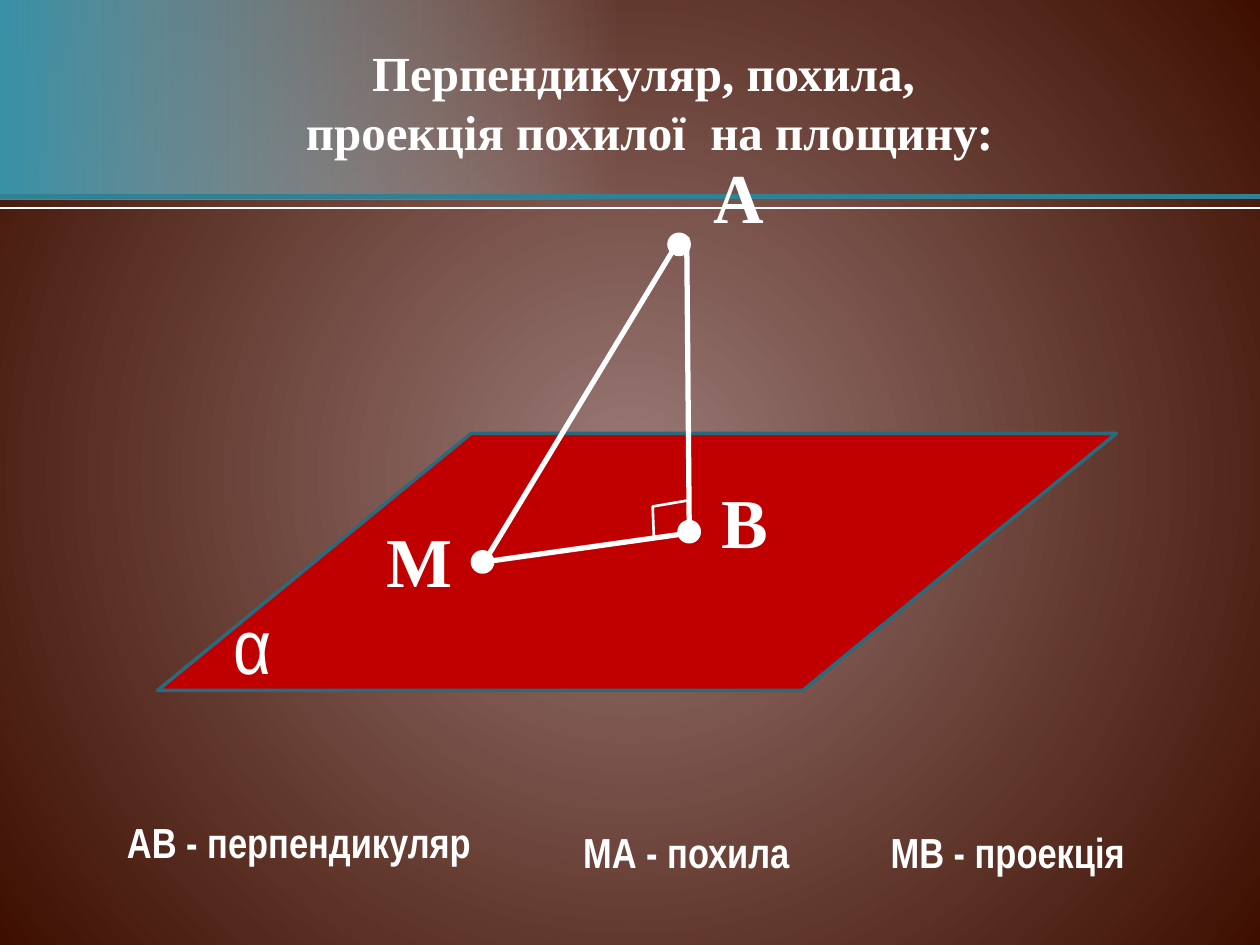
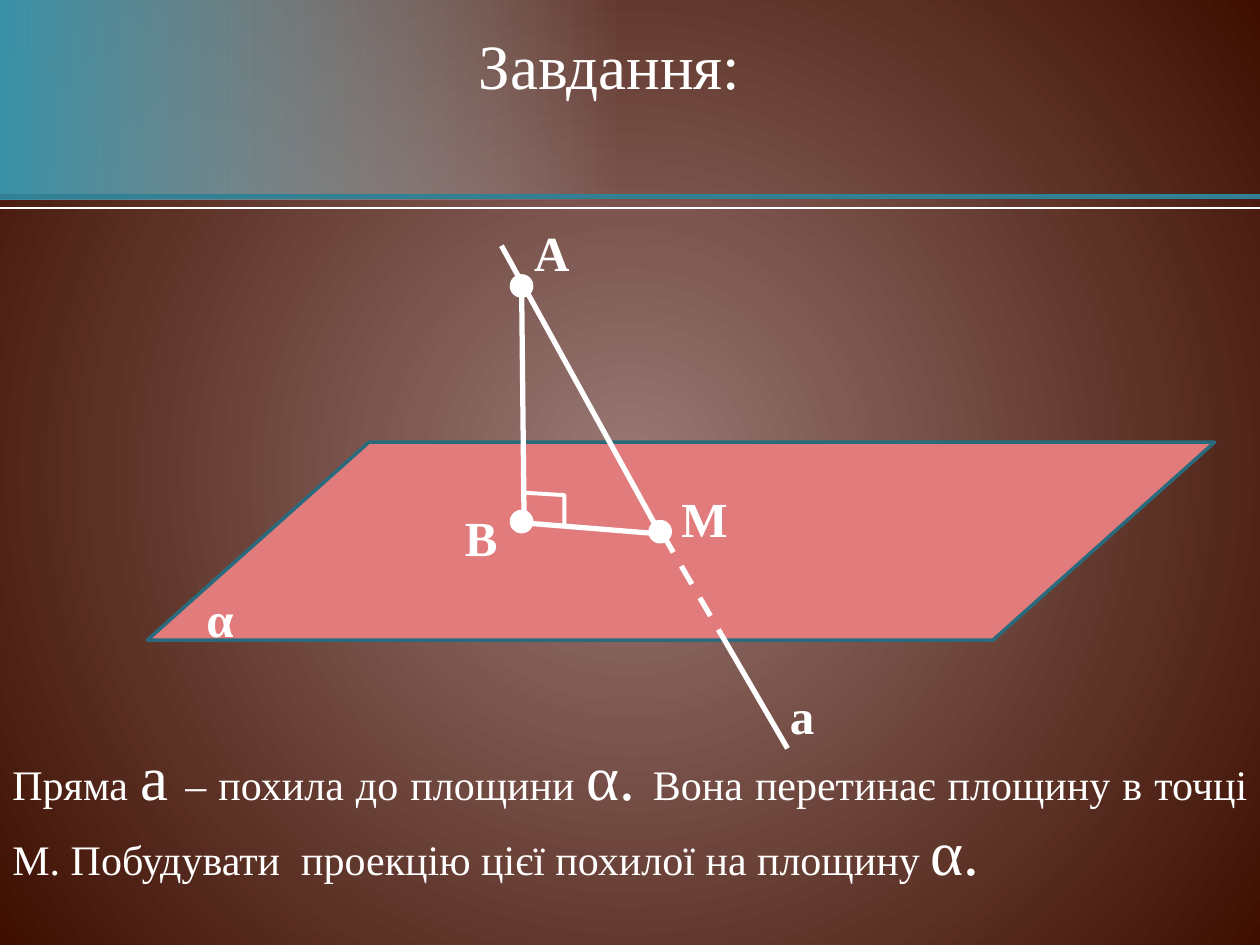
from lxml import etree
from pptx import Presentation
from pptx.dml.color import RGBColor
from pptx.enum.dml import MSO_LINE
from pptx.enum.shapes import MSO_CONNECTOR, MSO_SHAPE
from pptx.enum.text import MSO_ANCHOR, MSO_AUTO_SIZE, PP_ALIGN
from pptx.oxml.ns import qn
from pptx.util import Inches, Pt

WHITE = RGBColor(0xFF, 0xFF, 0xFF)
TEAL = RGBColor(0x38, 0x91, 0xA7)
MIST = RGBColor(0xE8, 0xEE, 0xF1)
RULE = RGBColor(0x31, 0x80, 0x93)
EDGE = RGBColor(0x29, 0x6B, 0x7C)
RED = RGBColor(0xC0, 0x00, 0x00)
PINK = RGBColor(0xE1, 0x7B, 0x7C)
GLOW = RGBColor(0x99, 0x78, 0x74)
DARK = RGBColor(0x3E, 0x0F, 0x01)

LEFT, MID, JUST = PP_ALIGN.LEFT, PP_ALIGN.CENTER, PP_ALIGN.JUSTIFY
TOP, FIXED = MSO_ANCHOR.TOP, MSO_AUTO_SIZE.NONE
RECT, SLANT = MSO_SHAPE.RECTANGLE, MSO_SHAPE.PARALLELOGRAM
DOT, STRAIGHT = MSO_SHAPE.FLOWCHART_CONNECTOR, MSO_CONNECTOR.STRAIGHT
DASH = MSO_LINE.DASH
SERIF, SANS = "Times New Roman", "Arial Narrow"

HEAD = {"name": SERIF, "size": Pt(28), "bold": True}
TASK = {"name": SERIF, "size": Pt(36), "bold": False}
BIG = {"name": SERIF, "size": Pt(40), "bold": True}
ALPHA = {"name": SANS, "size": Pt(44), "bold": False}
NOTE = {"name": SANS, "size": Pt(24), "bold": True}
TEXT = {"name": SERIF, "size": Pt(24), "bold": False}

PAGES = [
    {
        "title": ((0.31, 0.29, 9.69, 1.04), HEAD,
                  ["Перпендикуляр, похила, ", "проекція похилої  на площину:"]),
        "plane": ((1.25, 3.44, 7.61, 2.04), 1.22, RED),
        "lines": [
            (5.45, 1.88, 5.47, 4.14, None),
            (5.34, 1.99, 3.88, 4.4, None),
            (3.91, 4.45, 5.55, 4.22, None),
        ],
        "angle": ([(5.47, 3.97), (5.18, 4.02), (5.19, 4.28)], 1.5),
        "dots": [(5.39, 4.14), (5.31, 1.86), (3.75, 4.38)],
        "labels": [
            ((1.69, 4.69, 0.63, 0.84), MID, [("α", ALPHA)]),
            ((5.39, 1.17, 0.94, 0.77), MID, [("A", BIG)]),
            ((5.63, 3.75, 0.55, 0.77), LEFT, [("В", BIG)]),
            ((2.97, 4.06, 0.7, 0.77), LEFT, [("М", BIG)]),
            ((0.91, 6.43, 3.23, 0.5), LEFT, [("АВ - перпендикуляр", NOTE)]),
            ((4.53, 6.51, 2.2, 0.5), LEFT, [("МА - похила", NOTE)]),
            ((6.97, 6.51, 2.64, 0.5), LEFT, [("МВ - проекція", NOTE)]),
        ],
    },
    {
        "title": ((1.56, 0.16, 6.56, 0.71), TASK, ["Завдання:"]),
        "plane": ((1.17, 3.51, 8.47, 1.57), 1.12, PINK),
        "lines": [
            (3.98, 1.95, 5.23, 4.22, None),
            (5.26, 4.24, 5.75, 5.08, DASH),
            (5.75, 5.08, 6.25, 5.94, None),
            (4.14, 2.27, 4.16, 4.18, None),
            (4.16, 4.15, 5.27, 4.24, None),
        ],
        "angle": ([(4.15, 3.91), (4.48, 3.93), (4.48, 4.16)], 2.25),
        "dots": [(5.16, 4.14), (4.06, 2.19), (4.06, 4.06)],
        "labels": [
            ((5.31, 3.83, 0.63, 0.57), LEFT, [("М", HEAD)]),
            ((1.54, 4.62, 1.33, 0.57), LEFT, [("α", HEAD)]),
            ((4.14, 1.72, 0.78, 0.57), LEFT, [("А", HEAD)]),
            ((3.59, 3.98, 0.39, 0.57), LEFT, [("В", HEAD)]),
            ((6.17, 5.39, 0.86, 0.57), LEFT, [("а", HEAD)]),
            ((0, 5.8, 10, 1.31), JUST, [
                ("Пряма ", TEXT), ("a ", TASK), ("– похила до площини ", TEXT),
                ("α. ", TASK),
                ("Вона перетинає площину в точці М. Побудувати  проекцію "
                 "цієї похилої на площину ", TEXT),
                ("α.", TASK)]),
        ],
    },
]


def add_run(para, text, style):
    run = para.add_run()
    run.text = text
    for key, value in style.items():
        setattr(run.font, key, value)
    run.font.color.rgb = WHITE


def add_line(slide, ends, color, width, dash=None):
    line = slide.shapes.add_connector(STRAIGHT, *map(Inches, ends))
    line.line.color.rgb = color
    line.line.width = Pt(width)
    if dash:
        line.line.dash_style = dash
    etree.SubElement(line.element.spPr, qn("a:effectLst"))
    return line


prs = Presentation()
prs.slide_width, prs.slide_height = Inches(10), Inches(7.5)
layout = prs.slide_layouts[5]

back = prs.slide_master.background.fill
back.gradient()
for stop, color, pos in zip(back.gradient_stops, (GLOW, DARK), (0, 1)):
    stop.color.rgb = color
    stop.position = pos
lin = next(prs.slide_master.element.iter(qn("a:lin")))
ring = etree.Element(qn("a:path"), path="circle")
etree.SubElement(ring, qn("a:fillToRect"), dict.fromkeys("ltrb", "100000"))
lin.getparent().replace(lin, ring)

slides = [prs.slides.add_slide(layout) for page in PAGES]

band = slides[0].shapes.add_shape(RECT, 0, 0, Inches(10), Inches(1.58))
band.shadow.inherit = False
band.line.fill.background()
band.fill.gradient()
band.fill.gradient_angle = 0
for stop, color, pos in zip(band.fill.gradient_stops, (TEAL, MIST), (0, 0.49)):
    stop.color.rgb = color
    stop.position = pos
tint = list(band.element.spPr.iter(qn("a:srgbClr")))[-1]
etree.SubElement(tint, qn("a:alpha"), val="0")
rules = [add_line(slides[0], (0, y, 10, y), color, width)
         for y, color, width in ((1.56, RULE, 3), (1.65, WHITE, 1.25))]
for part in [band, *rules]:
    layout.shapes.element.append(part.element)

for slide, page in zip(slides, PAGES):
    shapes = slide.shapes
    box, style, rows = page["title"]
    title = shapes.title
    title.left, title.top, title.width, title.height = map(Inches, box)
    frame = title.text_frame
    frame.vertical_anchor = TOP
    frame.auto_size = FIXED
    for i, row in enumerate(rows):
        para = frame.add_paragraph() if i else frame.paragraphs[0]
        para.alignment = MID
        add_run(para, row, style)

    box, skew, color = page["plane"]
    plane = shapes.add_shape(SLANT, *map(Inches, box))
    plane.shadow.inherit = False
    plane.adjustments[0] = skew
    plane.fill.solid()
    plane.fill.fore_color.rgb = color
    plane.line.color.rgb = EDGE
    plane.line.width = Pt(2)

    for *ends, dash in page["lines"]:
        add_line(slide, ends, WHITE, 3, dash)

    points, width = page["angle"]
    first, *rest = [(Inches(x), Inches(y)) for x, y in points]
    pen = shapes.build_freeform(*first)
    pen.add_line_segments(rest, close=False)
    angle = pen.convert_to_shape()
    angle.shadow.inherit = False
    angle.fill.background()
    angle.line.color.rgb = WHITE
    angle.line.width = Pt(width)

    for x, y in page["dots"]:
        dot = shapes.add_shape(DOT, Inches(x), Inches(y), Inches(0.16), Inches(0.16))
        dot.shadow.inherit = False
        dot.fill.solid()
        dot.fill.fore_color.rgb = WHITE
        dot.line.color.rgb = WHITE
        dot.line.width = Pt(2)

    for box, align, runs in page["labels"]:
        frame = shapes.add_textbox(*map(Inches, box)).text_frame
        frame.word_wrap = True
        para = frame.paragraphs[0]
        para.alignment = align
        for text, style in runs:
            add_run(para, text, style)

prs.save("out.pptx")
